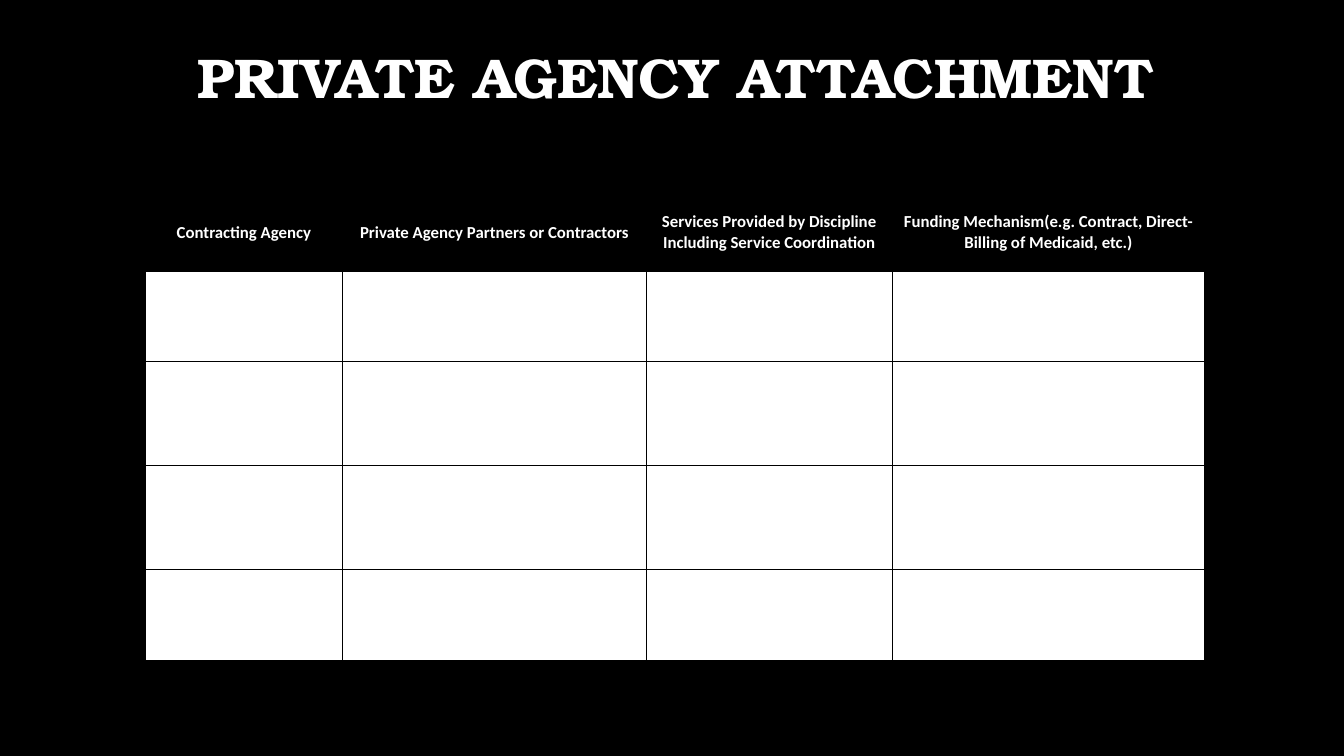
from dataclasses import dataclass

from lxml.etree import SubElement
from pptx import Presentation
from pptx.dml.color import RGBColor
from pptx.enum.text import MSO_ANCHOR, PP_ALIGN
from pptx.oxml.ns import qn
from pptx.slide import Slide
from pptx.table import _Cell
from pptx.text.text import _Paragraph
from pptx.util import Inches, Pt

COLORS = {"background": "000000", "line": "000000", "header": "000000",
          "body": "FFFFFF", "text": "FFFFFF"}
SLIDE_WIDTH, SLIDE_HEIGHT = Inches(13.33), Inches(7.5)


@dataclass(frozen=True)
class Column:
    heading: str
    width: float  # inches


COLUMNS = [
    Column("Contracting Agency", 1.96),
    Column("Private Agency Partners or Contractors", 3.01),
    Column("Services Provided by Discipline Including Service Coordination", 2.44),
    Column("Funding Mechanism(e.g. Contract, Direct-Billing of Medicaid, etc.)", 3.1),
]
ROW_HEIGHTS = [0.77, 0.9, 1.03, 1.03, 0.9]  # inches, header first


def color(name: str) -> RGBColor:
    return RGBColor.from_string(COLORS[name])


def style_paragraph(paragraph: _Paragraph, font_name: str, size: float) -> None:
    paragraph.alignment = PP_ALIGN.CENTER
    paragraph.font.name = font_name
    paragraph.font.size = Pt(size)
    paragraph.font.bold = True
    paragraph.font.color.rgb = color("text")


def add_title(slide: Slide, text: str) -> None:
    shape = slide.shapes.add_textbox(Inches(1.04), Inches(0.35), Inches(11.32), Inches(0.89))
    frame = shape.text_frame
    frame.word_wrap = True
    frame.vertical_anchor = MSO_ANCHOR.MIDDLE
    paragraph = frame.paragraphs[0]
    paragraph.text = text
    paragraph.line_spacing = 0.9
    style_paragraph(paragraph, "TeX Gyre Bonum", 40)


def style_cell(cell: _Cell, fill_name: str) -> None:
    # Borders come before the fill in the cell properties
    properties = cell._tc.get_or_add_tcPr()
    for side in ("a:lnL", "a:lnR", "a:lnT", "a:lnB"):
        line = SubElement(properties, qn(side), w=str(Pt(1)))
        line_fill = SubElement(line, qn("a:solidFill"))
        SubElement(line_fill, qn("a:srgbClr"), val=COLORS["line"])
    cell.fill.solid()
    cell.fill.fore_color.rgb = color(fill_name)


def add_agency_table(slide: Slide) -> None:
    width = Inches(sum(column.width for column in COLUMNS))
    height = Inches(sum(ROW_HEIGHTS))
    table = slide.shapes.add_table(len(ROW_HEIGHTS), len(COLUMNS),
                                   Inches(1.44), Inches(1.92), width, height).table
    table.horz_banding = False
    for row, row_height in zip(table.rows, ROW_HEIGHTS):
        row.height = Inches(row_height)
    for index, column in enumerate(COLUMNS):
        table.columns[index].width = Inches(column.width)
        for row_index in range(len(ROW_HEIGHTS)):
            style_cell(table.cell(row_index, index), "body" if row_index else "header")

        # Column heading
        heading = table.cell(0, index)
        heading.text = column.heading
        heading.vertical_anchor = MSO_ANCHOR.MIDDLE
        heading.margin_left = heading.margin_right = Inches(0.07)
        heading.margin_top = heading.margin_bottom = 0
        style_paragraph(heading.text_frame.paragraphs[0], "Calibri", 12)


def main() -> None:
    presentation = Presentation()
    presentation.slide_width, presentation.slide_height = SLIDE_WIDTH, SLIDE_HEIGHT
    slide = presentation.slides.add_slide(presentation.slide_layouts[6])
    slide.background.fill.solid()
    slide.background.fill.fore_color.rgb = color("background")
    add_title(slide, "PRIVATE AGENCY ATTACHMENT")
    add_agency_table(slide)
    presentation.save("out.pptx")


if __name__ == "__main__":
    main()
